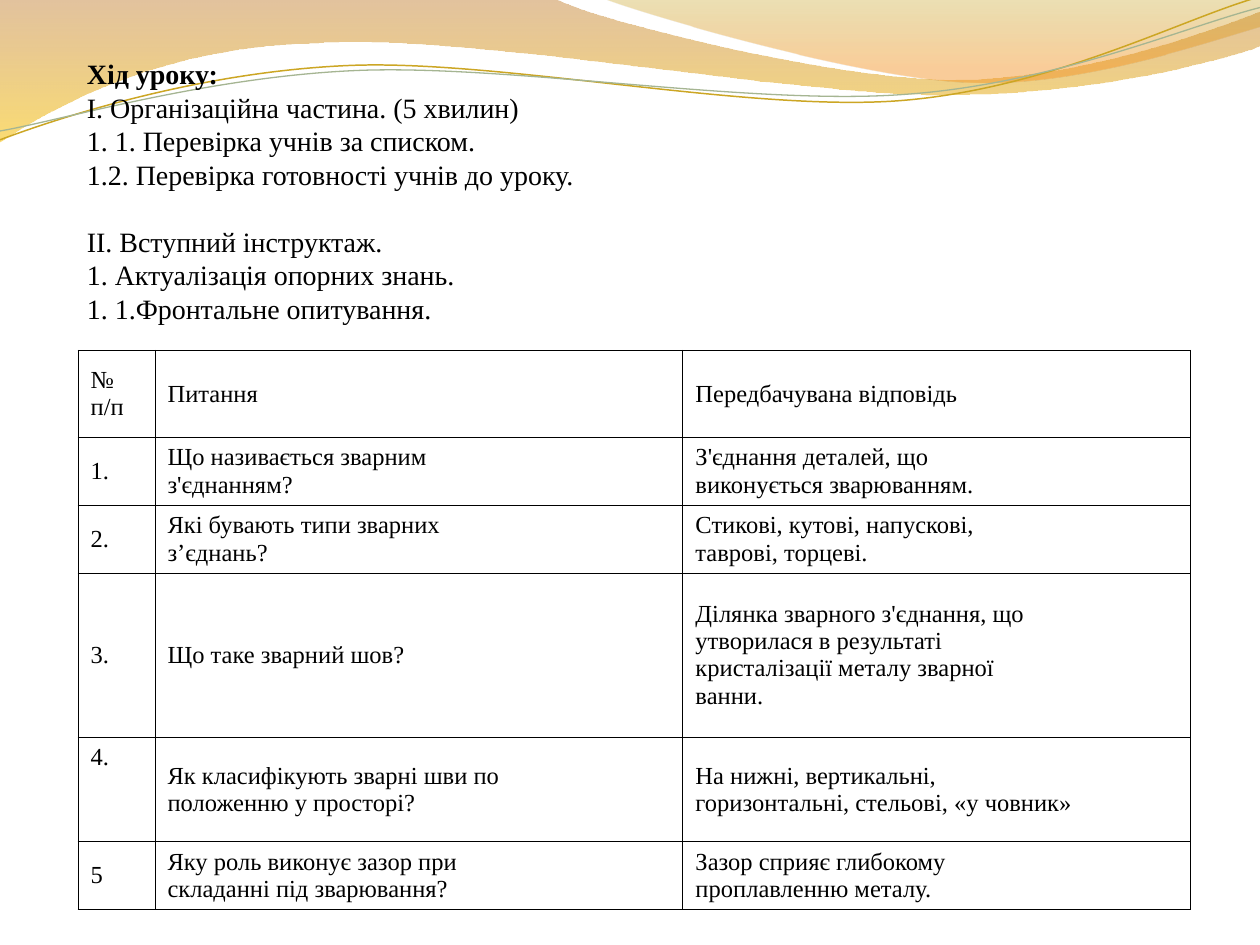
"""Build the lesson plan slide with a question table under a wave header."""
from math import cos, radians, sin
from lxml.etree import SubElement
from pptx import Presentation
from pptx.dml.color import RGBColor
from pptx.enum.text import MSO_ANCHOR, MSO_AUTO_SIZE, PP_ALIGN
from pptx.oxml.ns import qn
from pptx.util import Inches, Pt

COLORS = {
    "text": "000000",
    "brown": "C07A28",
    "yellow": "F7BF00",
    "olive": "C09709",
    "orange": "F59320",
    "gold": "CCA624",
    "sage": "A5B592",
}
FONT = "Times New Roman"
STRAND_TILT = 2.7


def rgb(name):
    return RGBColor.from_string(COLORS[name])


def add_wave(shapes, start, segments, close):
    """Draw lines (one point) and cubic curves (three points) from start."""
    ends = [(Inches(x), Inches(y)) for x, y in [start] + [s[-1] for s in segments]]
    builder = shapes.build_freeform(*ends[0])
    builder.add_line_segments(ends[1:], close=close)
    wave = builder.convert_to_shape()
    wave.shadow.inherit = False
    for line, segment in zip(list(wave.element.iter(qn("a:lnTo"))), segments):
        if len(segment) == 3:
            curve = line.makeelement(qn("a:cubicBezTo"))
            for x, y in segment:
                SubElement(curve, qn("a:pt"), x=str(Inches(x) - wave.left),
                           y=str(Inches(y) - wave.top))
            line.getparent().replace(line, curve)
    return wave


prs = Presentation()
prs.slide_width, prs.slide_height = Inches(10), Inches(7.5)
slide = prs.slides.add_slide(prs.slide_layouts[5])
shapes = slide.shapes

bands = [
    ((0, 0),
     [[(4.4, -0.01)],
      [(4.76, 0.17), (6.64, 0.63), (7.58, 0.63)],
      [(8.53, 0.63), (9.58, 0.26), (10, 0.09)],
      [(10.01, 0.36)],
      [(9.83, 0.44), (8.7, 0.76), (7.46, 0.75)],
      [(6.22, 0.75), (3.82, 0.28), (2.57, 0.34)],
      [(1.29, 0.36), (0.46, 0.83), (-0.01, 1.13)]],
     [("brown", 0, 45), ("yellow", 1, 55)]),
    ((4.79, -0.01),
     [[(5.09, 0.11), (6.82, 0.62), (7.69, 0.65)],
      [(8.56, 0.69), (9.61, 0.32), (10, 0.21)],
      [(10, 0)]],
     [("olive", 0, 30), ("orange", 0.8, 45)]),
]
for start, segments, stops in bands:
    band = add_wave(shapes, start, segments, True)
    band.line.fill.background()
    band.fill.gradient()
    band.fill.gradient_angle = 270
    for stop, (color, position, _) in zip(band.fill.gradient_stops, stops):
        stop.color.rgb = rgb(color)
        stop.position = position
    for node, (_, _, opacity) in zip(band.element.iter(qn("a:srgbClr")), stops):
        SubElement(node, qn("a:alpha"), val=str(opacity * 1000))

strands = [
    ([(0, 1.11), (0.48, 0.93), (1.58, 0.57), (2.77, 0.52), (3.95, 0.47), (5.93, 0.89),
      (7.13, 0.8), (8.33, 0.71), (9.38, 0.15), (9.98, -0.02)], (4.99, 0.57), "gold", 0.85),
    ([(0, 1.04), (0.47, 0.96), (1.64, 0.61), (2.83, 0.56), (4.03, 0.51), (5.97, 0.84),
      (7.17, 0.75), (8.36, 0.67), (9.41, 0.21), (10, 0.06)], (5, 0.59), "sage", 0.75),
]
tilt_cos, tilt_sin = cos(radians(STRAND_TILT)), sin(radians(STRAND_TILT))
for points, (mid_x, mid_y), color, width in strands:
    level = [
        (mid_x + (x - mid_x) * tilt_cos - (y - mid_y) * tilt_sin,
         mid_y + (x - mid_x) * tilt_sin + (y - mid_y) * tilt_cos)
        for x, y in points
    ]
    curves = [level[i:i + 3] for i in range(1, len(level), 3)]
    strand = add_wave(shapes, level[0], curves, False)
    strand.rotation = 360 - STRAND_TILT
    strand.fill.background()
    strand.line.color.rgb = rgb(color)
    strand.line.width = Pt(width)

questions = [
    ("№\vп/п", "Питання", "Передбачувана відповідь"),
    ("1.", "Що називається зварним\vз'єднанням?",
     "З'єднання деталей, що\vвиконується зварюванням."),
    ("2.", "Які бувають типи зварних\vз’єднань?",
     "Стикові, кутові, напускові,\vтаврові, торцеві."),
    ("3.", "Що таке зварний шов?",
     "Ділянка зварного з'єднання, що\vутворилася в результаті\v"
     "кристалізації металу зварної\vванни."),
    ("4.", "Як класифікують зварні шви по\vположенню у просторі?",
     "На нижні, вертикальні,\vгоризонтальні, стельові, «у човник»"),
    ("5", "Яку роль виконує зазор при\nскладанні під зварювання?",
     "Зазор сприяє глибокому\nпроплавленню металу."),
]
column_widths = [0.61, 4.19, 4.03]
row_heights = [0.69, 0.54, 0.54, 1.3, 0.83, 0.54]
table = shapes.add_table(
    len(questions), len(column_widths),
    Inches(0.62), Inches(2.78), Inches(8.83), Inches(sum(row_heights)),
).table
table.first_row = table.horz_banding = False
for column, width in zip(table.columns, column_widths):
    column.width = Inches(width)
for row, height in zip(table.rows, row_heights):
    row.height = Inches(height)

for r, entries in enumerate(questions):
    thick_side = {4: "lnB", 5: "lnT"}.get(r)
    for c, entry in enumerate(entries):
        cell = table.cell(r, c)
        cell.text = entry
        cell.vertical_anchor = MSO_ANCHOR.TOP if (r, c) == (4, 0) else MSO_ANCHOR.MIDDLE
        for paragraph in cell.text_frame.paragraphs:
            for run in paragraph.runs:
                run.font.name, run.font.size = FONT, Pt(14)
                run.font.color.rgb = rgb("text")
        properties = cell._tc.get_or_add_tcPr()
        for side in ("lnL", "lnR", "lnT", "lnB"):
            width = Pt(1 if side == thick_side else 0.5)
            border = SubElement(properties, qn(f"a:{side}"), w=str(width))
            fill = SubElement(border, qn("a:solidFill"))
            SubElement(fill, qn("a:srgbClr"), val=COLORS["text"])
        cell.fill.background()

plan_parts = [
    "Хід уроку:\vI. Організаційна частина. (5 хвилин)\v"
    "1. 1. Перевірка учнів за списком.\v1.2. Перевірка готовності учнів до уроку.",
    "II. Вступний інструктаж.\v1. Актуалізація опорних знань.\v"
    "1. 1.Фронтальне опитування.",
]
plan = shapes.title
plan.left, plan.top = Inches(0.59), Inches(0.48)
plan.width, plan.height = Inches(7.85), Inches(2.66)
shapes.element.append(plan.element)
frame = plan.text_frame
frame.text = "\n".join(plan_parts)
frame.word_wrap = True
frame.auto_size = MSO_AUTO_SIZE.NONE
frame.vertical_anchor = MSO_ANCHOR.MIDDLE
frame.margin_top, frame.margin_bottom = 0, Inches(0.59)
for index, paragraph in enumerate(frame.paragraphs):
    paragraph.alignment = PP_ALIGN.LEFT
    paragraph.space_before = Pt(19.2 * index)
    for run in paragraph.runs:
        run.font.name, run.font.size = FONT, Pt(16)
        run.font.bold = False
        run.font.color.rgb = rgb("text")
frame.paragraphs[0].runs[0].font.bold = True

prs.save("out.pptx")
